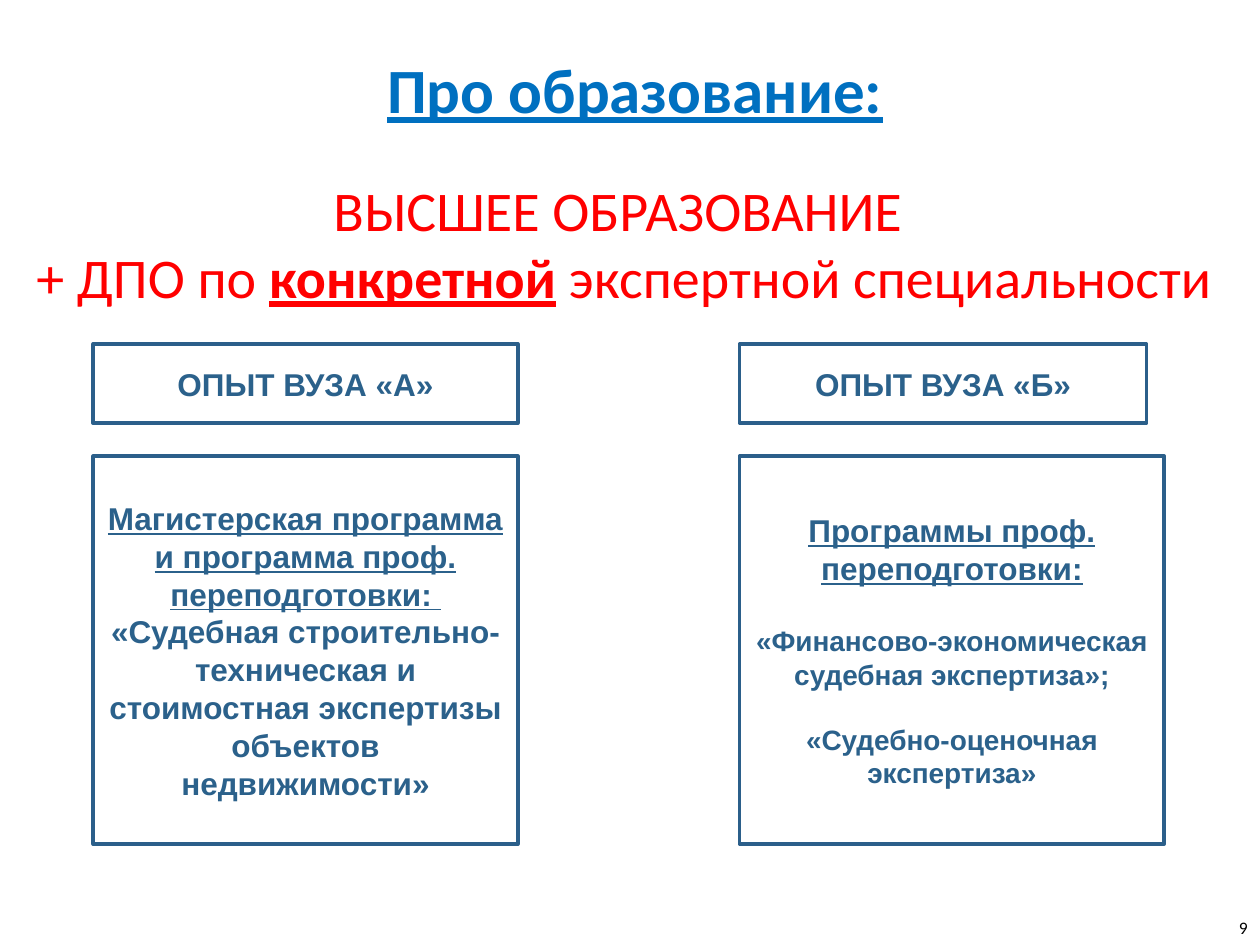
from pptx import Presentation
from pptx.dml.color import RGBColor
from pptx.enum import shapes, text
from pptx.util import Inches, Pt


def rgb(value):
    return RGBColor.from_string(value)


class SlideBuilder:
    TITLE, ACCENT, LINE, INK, BLACK = "0070C0", "FF0000", "2B5F8A", "2B618B", "000000"

    def __init__(self, slide):
        self.slide = slide

    def frame(self, sp, anchor):
        tf = sp.text_frame
        tf.word_wrap = True
        tf.auto_size = text.MSO_AUTO_SIZE.NONE
        tf.vertical_anchor = anchor
        return tf

    def paragraph(self, tf, runs, size, color, font="Calibri", bold=False,
                  underline=False, before=0, align=text.PP_ALIGN.CENTER):
        """Fill the empty first paragraph or add one; runs are (text, emphasised)."""
        p = tf.add_paragraph() if tf.text else tf.paragraphs[0]
        p.alignment = align
        p.space_before = Pt(before)
        f = p.font
        f.name, f.size, f.bold, f.underline = font, Pt(size), bold, underline
        f.color.rgb = rgb(color)
        for words, emphasised in runs:
            r = p.add_run()
            r.text = words
            if emphasised:
                r.font.bold = r.font.underline = True

    def title(self, words, x, y, w, h):
        sp = self.slide.shapes.title
        sp.left, sp.top, sp.width, sp.height = map(Inches, (x, y, w, h))
        tf = self.frame(sp, text.MSO_ANCHOR.TOP)
        self.paragraph(tf, [(words, False)], 36, self.TITLE, bold=True, underline=True)

    def text_box(self, lines, x, y, w, h, size, color,
                 anchor=text.MSO_ANCHOR.TOP, align=text.PP_ALIGN.CENTER):
        sp = self.slide.shapes.add_textbox(*map(Inches, (x, y, w, h)))
        tf = self.frame(sp, anchor)
        for runs in lines:
            self.paragraph(tf, runs, size, color, align=align)

    def box(self, lines, x, y, w, h):
        """Draw an outlined box; lines are (text, size, underline, space before)."""
        sp = self.slide.shapes.add_shape(
            shapes.MSO_SHAPE.RECTANGLE, *map(Inches, (x, y, w, h)))
        sp.shadow.inherit = False
        sp.fill.background()
        sp.line.color.rgb = rgb(self.LINE)
        sp.line.width = Pt(2)
        tf = self.frame(sp, text.MSO_ANCHOR.MIDDLE)
        for words, size, underline, before in lines:
            self.paragraph(tf, [(words, False)], size, self.INK, "Arial",
                           True, underline, before)


def main():
    prs = Presentation()
    prs.slide_width, prs.slide_height = Inches(10), Inches(7.5)
    s = SlideBuilder(prs.slides.add_slide(prs.slide_layouts[5]))

    s.title("Про образование:", 1.01, 0.35, 8.06, 0.71)
    s.text_box([[("ВЫСШЕЕ ОБРАЗОВАНИЕ ", False)],
                [("+ ДПО по ", False), ("конкретной", True),
                 (" экспертной специальности", False)]],
               0.17, 1.34, 9.57, 1.18, 32, s.ACCENT)
    s.text_box([[("9", False)]], 9.42, 7.22, 0.58, 0.28, 10, s.BLACK,
               text.MSO_ANCHOR.MIDDLE, text.PP_ALIGN.RIGHT)

    columns = [
        (0.74, 3.37, "ОПЫТ ВУЗА «А»", [
            ("Магистерская программа и программа проф. переподготовки: ", 18, True, 0),
            ("«Судебная строительно-техническая и стоимостная экспертизы "
             "объектов недвижимости»", 18, False, 0)]),
        (5.87, 3.23, "ОПЫТ ВУЗА «Б»", [
            ("Программы проф. переподготовки:", 18, True, 0),
            ("«Финансово-экономическая судебная экспертиза»;", 16, False, 21),
            ("«Судебно-оценочная экспертиза»", 16, False, 18)]),
    ]
    for x, heading_width, heading, programmes in columns:
        s.box([(heading, 18, False, 0)], x, 2.73, heading_width, 0.63)
        s.box(programmes, x, 3.62, 3.37, 3.08)

    prs.save("out.pptx")


if __name__ == "__main__":
    main()
